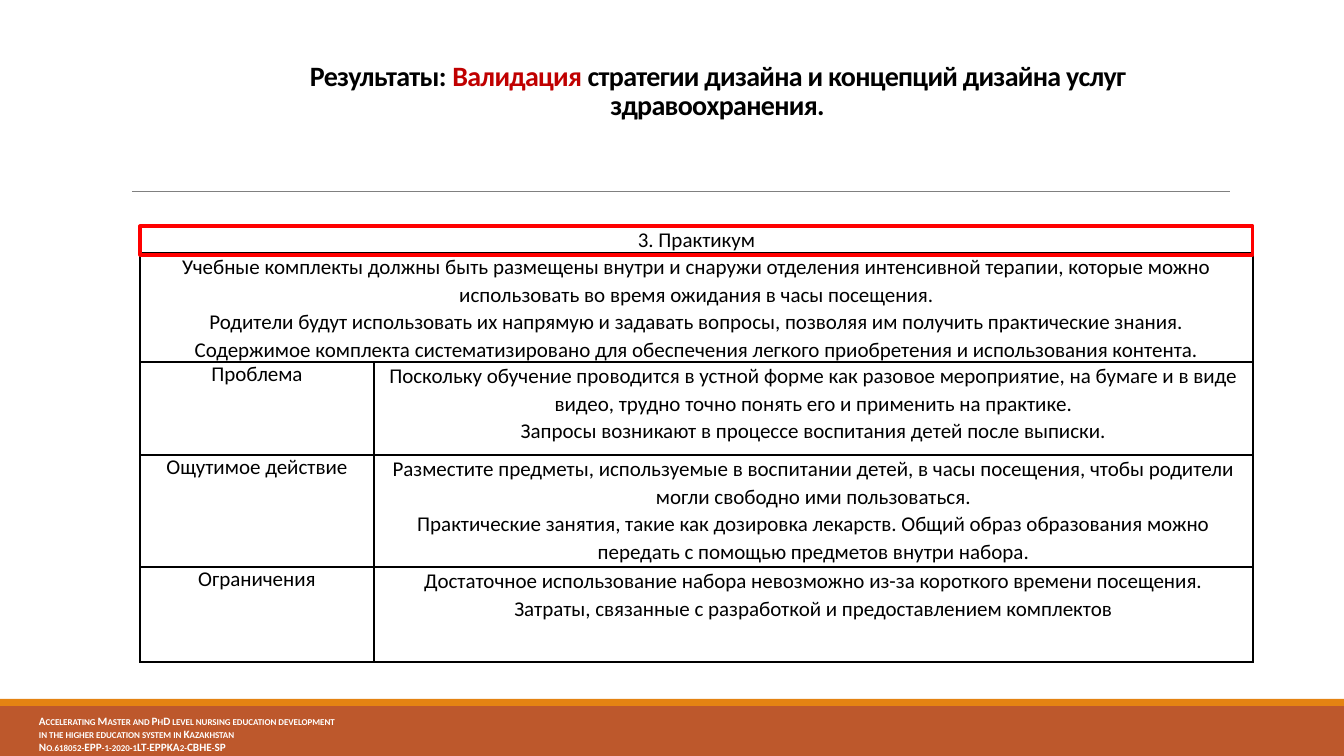
import pptx
import pptx.dml.color
import pptx.enum.shapes
import pptx.enum.text
import pptx.oxml
import pptx.oxml.ns
import pptx.util

RGB = pptx.dml.color.RGBColor
BLACK = RGB(0x00, 0x00, 0x00)
WHITE = RGB(0xFF, 0xFF, 0xFF)
RUST = RGB(0xBD, 0x58, 0x2C)
ORANGE = RGB(0xE4, 0x83, 0x12)
GRAY = RGB(0x80, 0x80, 0x80)
DARK_RED = RGB(0xC0, 0x00, 0x00)
RED = RGB(0xFF, 0x00, 0x00)

FONT = "Calibri"
PX_PER_INCH = 100.8
WIDTH, HEIGHT = 1344, 756
CENTER = pptx.enum.text.PP_ALIGN.CENTER
LEFT = pptx.enum.text.PP_ALIGN.LEFT
TOP = pptx.enum.text.MSO_ANCHOR.TOP
BOTTOM = pptx.enum.text.MSO_ANCHOR.BOTTOM

TITLE = [
    ("Результаты: ", BLACK),
    ("Валидация", DARK_RED),
    (" стратегии дизайна и концепций дизайна услуг здравоохранения.", BLACK),
]
FOOTER = [
    "Accelerating Master and PhD level nursing education development",
    "in the higher education system in Kazakhstan",
    "No.618052-EPP-1-2020-1LT-EPPKA2-CBHE-SP",
]
COLUMN_WIDTHS = [234, 879]
ROW_HEIGHTS = [25, 109, 93, 112, 95]
# A row with one cell spans both columns
ROWS = [
    [["3. Практикум"]],
    [["Учебные комплекты должны быть размещены внутри и снаружи отделения интенсивной терапии, "
      "которые можно использовать во время ожидания в часы посещения.",
      "Родители будут использовать их напрямую и задавать вопросы, позволяя им получить "
      "практические знания.",
      "Содержимое комплекта систематизировано для обеспечения легкого приобретения и "
      "использования контента."]],
    [["Проблема"],
     ["Поскольку обучение проводится в устной форме как разовое мероприятие, на бумаге и в виде "
      "видео, трудно точно понять его и применить на практике.",
      "Запросы возникают в процессе воспитания детей после выписки."]],
    [["Ощутимое действие"],
     ["Разместите предметы, используемые в воспитании детей, в часы посещения, чтобы родители "
      "могли свободно ими пользоваться.",
      "Практические занятия, такие как дозировка лекарств. Общий образ образования можно "
      "передать с помощью предметов внутри набора."]],
    [["Ограничения"],
     ["Достаточное использование набора невозможно из-за короткого времени посещения.",
      "Затраты, связанные с разработкой и предоставлением комплектов"]],
]


def px(length):
    return pptx.util.Emu(round(length * 914400 / PX_PER_INCH))


def write_text(frame, paragraphs, size, align=LEFT, spacing=None, bold=False, extra=None):
    """Each paragraph is a list of (text, colour) runs; extra holds run attributes."""
    frame.word_wrap = True
    for index, runs in enumerate(paragraphs):
        paragraph = frame.add_paragraph() if index else frame.paragraphs[0]
        paragraph.alignment = align
        if spacing:
            paragraph.line_spacing = spacing
        for text, color in runs:
            run = paragraph.add_run()
            run.text = text
            run.font.name = FONT
            run.font.size = pptx.util.Pt(size)
            run.font.bold = bold
            run.font.color.rgb = color
            for name, value in (extra or {}).items():
                run._r.get_or_add_rPr().set(name, value)


def add_text_box(slide, box, paragraphs, anchor=TOP, **text_format):
    frame = slide.shapes.add_textbox(*map(px, box)).text_frame
    frame.vertical_anchor = anchor
    write_text(frame, paragraphs, **text_format)


def add_rectangle(slide, box, fill=None, line=None, line_width=1):
    shape = slide.shapes.add_shape(
        pptx.enum.shapes.MSO_SHAPE.RECTANGLE, *map(px, box))
    shape.shadow.inherit = False
    if fill is None:
        shape.fill.background()
    else:
        shape.fill.solid()
        shape.fill.fore_color.rgb = fill
    if line is None:
        shape.line.fill.background()
    else:
        shape.line.color.rgb = line
        shape.line.width = pptx.util.Pt(line_width)


def add_rule(slide, left, top, width):
    connector = slide.shapes.add_connector(
        pptx.enum.shapes.MSO_CONNECTOR.STRAIGHT, px(left), px(top), px(left + width), px(top))
    connector.line.color.rgb = GRAY
    connector.line.width = pptx.util.Pt(0.5)
    connector._element.spPr.append(pptx.oxml.parse_xml(
        f"<a:effectLst {pptx.oxml.ns.nsdecls('a')}/>"))


def format_cell(cell):
    properties = cell._tc.get_or_add_tcPr()
    for side in ("lnL", "lnR", "lnT", "lnB"):
        properties.append(pptx.oxml.parse_xml(
            f"<a:{side} {pptx.oxml.ns.nsdecls('a')} w='12700'>"
            f"<a:solidFill><a:srgbClr val='{BLACK}'/></a:solidFill></a:{side}>"))
    cell.fill.solid()
    cell.fill.fore_color.rgb = WHITE
    cell.margin_left = cell.margin_right = px(5)
    cell.margin_top = cell.margin_bottom = 0


def add_footer(slide, box):
    left, top, width, height = box
    stripe = 7
    add_rectangle(slide, (left, top + stripe, width, height - stripe), fill=RUST)
    add_rectangle(slide, (left, top, width, stripe), fill=ORANGE)
    add_text_box(slide, (left + 29, top + 10, 463, height - 10),
                 [[(line, WHITE)] for line in FOOTER],
                 size=8, bold=True, extra={"cap": "small"})


def add_header(slide, box):
    left, top, width, height = box
    add_rule(slide, left, top + height, width)
    add_text_box(slide, (left + 89, top, 993, 112), [TITLE], anchor=BOTTOM,
                 size=20, align=CENTER, spacing=0.85, bold=True, extra={"spc": "-50"})


def add_workshop_table(slide, box):
    left, top, width, height = box
    table = slide.shapes.add_table(
        len(ROWS), len(COLUMN_WIDTHS), *map(px, box)).table
    table.first_row = table.horz_banding = False
    for column, column_width in zip(table.columns, COLUMN_WIDTHS):
        column.width = px(column_width)
    for row, row_height in zip(table.rows, ROW_HEIGHTS):
        row.height = px(row_height)
    for cell in table.iter_cells():
        format_cell(cell)
    for row_index, row in enumerate(ROWS):
        if len(row) == 1:
            table.cell(row_index, 0).merge(table.cell(row_index, 1))
        for column_index, lines in enumerate(row):
            is_label = len(row) == 2 and column_index == 0
            write_text(table.cell(row_index, column_index).text_frame,
                       [[(line, BLACK)] for line in lines],
                       size=15, align=CENTER, spacing=1.0 if is_label else 1.07)
    # Frame around the heading row
    add_rectangle(slide, (left, top, width, 29), line=RED, line_width=2.25)


def main():
    presentation = pptx.Presentation()
    presentation.slide_width = px(WIDTH)
    presentation.slide_height = px(HEIGHT)
    slide = presentation.slides.add_slide(presentation.slide_layouts[6])
    add_footer(slide, (0, 699, WIDTH, HEIGHT - 699))
    add_header(slide, (132, 14, 1098, 177))
    add_workshop_table(slide, (140, 226, sum(COLUMN_WIDTHS), sum(ROW_HEIGHTS)))
    presentation.save("out.pptx")


if __name__ == "__main__":
    main()
